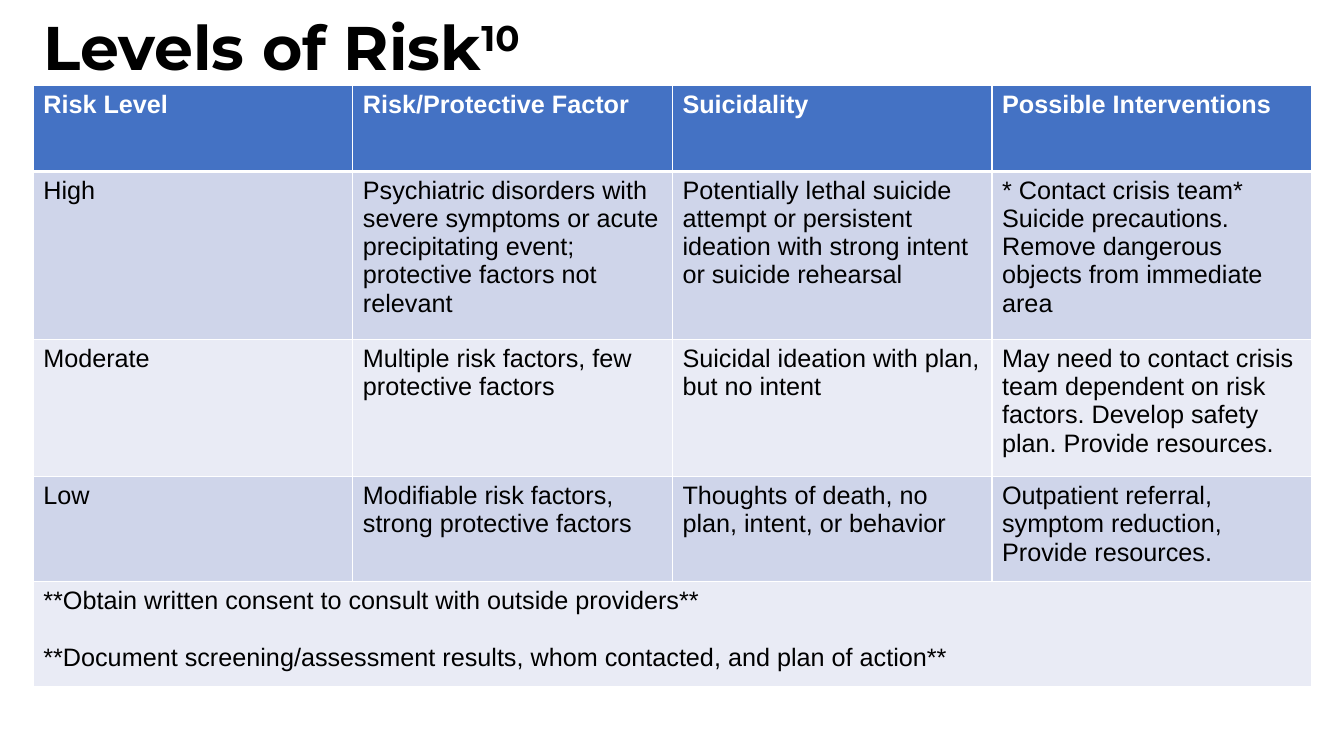
from dataclasses import dataclass

from lxml import etree
from pptx import Presentation
from pptx.dml.color import RGBColor
from pptx.enum.text import MSO_ANCHOR, MSO_AUTO_SIZE, PP_ALIGN
from pptx.oxml.ns import qn
from pptx.util import Inches, Pt

LEFT = PP_ALIGN.LEFT
MIDDLE = MSO_ANCHOR.MIDDLE
NO_AUTOFIT = MSO_AUTO_SIZE.NONE
TITLE_ONLY = 5


@dataclass(frozen=True)
class Theme:
    title_font: str = "Montserrat"
    body_font: str = "Arial"
    title_size: int = 44
    body_size: int = 18
    ink: str = "000000"
    paper: str = "FFFFFF"
    header: str = "4472C4"
    bands: tuple = ("CFD5EA", "E9EBF5")
    rule: int = 1
    header_rule: int = 3
    note_gap: float = 20.7


HEADINGS = ["Risk Level", "Risk/Protective Factor", "Suicidality", "Possible Interventions"]
RISK_LEVELS = [
    ["High",
     "Psychiatric disorders with severe symptoms or acute precipitating event; "
     "protective factors not relevant",
     "Potentially lethal suicide attempt or persistent ideation with strong intent "
     "or suicide rehearsal",
     "* Contact crisis team* Suicide precautions. Remove dangerous objects from "
     "immediate area"],
    ["Moderate",
     "Multiple risk factors, few protective factors",
     "Suicidal ideation with plan, but no intent",
     "May need to contact crisis team dependent on risk factors. Develop safety plan. "
     "Provide resources."],
    ["Low",
     "Modifiable risk factors, strong protective factors",
     "Thoughts of death, no plan, intent, or behavior",
     "Outpatient referral, symptom reduction, Provide resources."],
]
NOTES = ("**Obtain written consent to consult with outside providers**\n"
         "**Document screening/assessment results, whom contacted, and plan of action**")
ROW_HEIGHTS = [0.85, 1.67, 1.36, 1.04, 1.04]
COLUMN_WIDTH = 3.17


def apply(target, values):
    for name, value in values.items():
        setattr(target, name, value)


class SlideBuilder:
    def __init__(self, slide, theme):
        self.slide = slide
        self.theme = theme

    def format_font(self, font, family, size, color, bold):
        apply(font, {"name": family, "size": Pt(size), "bold": bold})
        font.color.rgb = RGBColor.from_string(color)

    def title(self, heading, reference):
        theme = self.theme
        title = self.slide.shapes.title
        apply(title, {"left": Inches(0.33), "top": Inches(0.02),
                      "width": Inches(11.5), "height": Inches(0.96)})
        apply(title.text_frame, {"auto_size": NO_AUTOFIT, "word_wrap": True,
                                 "vertical_anchor": MIDDLE})
        paragraph = title.text_frame.paragraphs[0]
        apply(paragraph, {"alignment": LEFT, "line_spacing": 0.9})
        for text, baseline in ((heading, 0), (reference, 30000)):
            run = paragraph.add_run()
            run.text = text
            self.format_font(run.font, theme.title_font, theme.title_size, theme.ink, True)
            if baseline:
                run.font._element.set("baseline", str(baseline))

    def borders(self, cell, top, bottom):
        properties = cell._tc.get_or_add_tcPr()
        widths = {"lnL": self.theme.rule, "lnR": self.theme.rule, "lnT": top, "lnB": bottom}
        for side, width in widths.items():
            line = etree.SubElement(properties, qn(f"a:{side}"), w=str(Pt(width)))
            fill = etree.SubElement(line, qn("a:solidFill"))
            etree.SubElement(fill, qn("a:srgbClr"), val=self.theme.paper)

    def cell(self, cell, text, row):
        theme = self.theme
        is_header = row == 0
        self.borders(cell,
                     theme.header_rule if row == 1 else theme.rule,
                     theme.header_rule if is_header else theme.rule)
        cell.fill.solid()
        background = theme.header if is_header else theme.bands[(row - 1) % 2]
        cell.fill.fore_color.rgb = RGBColor.from_string(background)
        cell.text = text
        color = theme.paper if is_header else theme.ink
        for index, paragraph in enumerate(cell.text_frame.paragraphs):
            if index:
                paragraph.space_before = Pt(theme.note_gap)
            self.format_font(paragraph.font, theme.body_font, theme.body_size, color, is_header)
            for run in paragraph.runs:
                self.format_font(run.font, theme.body_font, theme.body_size, color, is_header)

    def table(self, rows, left, top):
        columns = len(rows[0])
        table = self.slide.shapes.add_table(
            len(rows), columns, Inches(left), Inches(top),
            Inches(COLUMN_WIDTH * columns), Inches(sum(ROW_HEIGHTS))).table
        for column in table.columns:
            column.width = Inches(COLUMN_WIDTH)
        for row, (height, texts) in enumerate(zip(ROW_HEIGHTS, rows)):
            table.rows[row].height = Inches(height)
            for column, text in enumerate(texts):
                self.cell(table.cell(row, column), text, row)
            if len(texts) < columns:
                table.cell(row, 0).merge(table.cell(row, columns - 1))


def main():
    deck = Presentation()
    apply(deck, {"slide_width": Inches(13.33), "slide_height": Inches(7.5)})
    slide = deck.slides.add_slide(deck.slide_layouts[TITLE_ONLY])
    builder = SlideBuilder(slide, Theme())
    builder.title("Levels of Risk", "10")
    builder.table([HEADINGS, *RISK_LEVELS, [NOTES]], 0.33, 0.85)
    deck.save("out.pptx")


if __name__ == "__main__":
    main()
